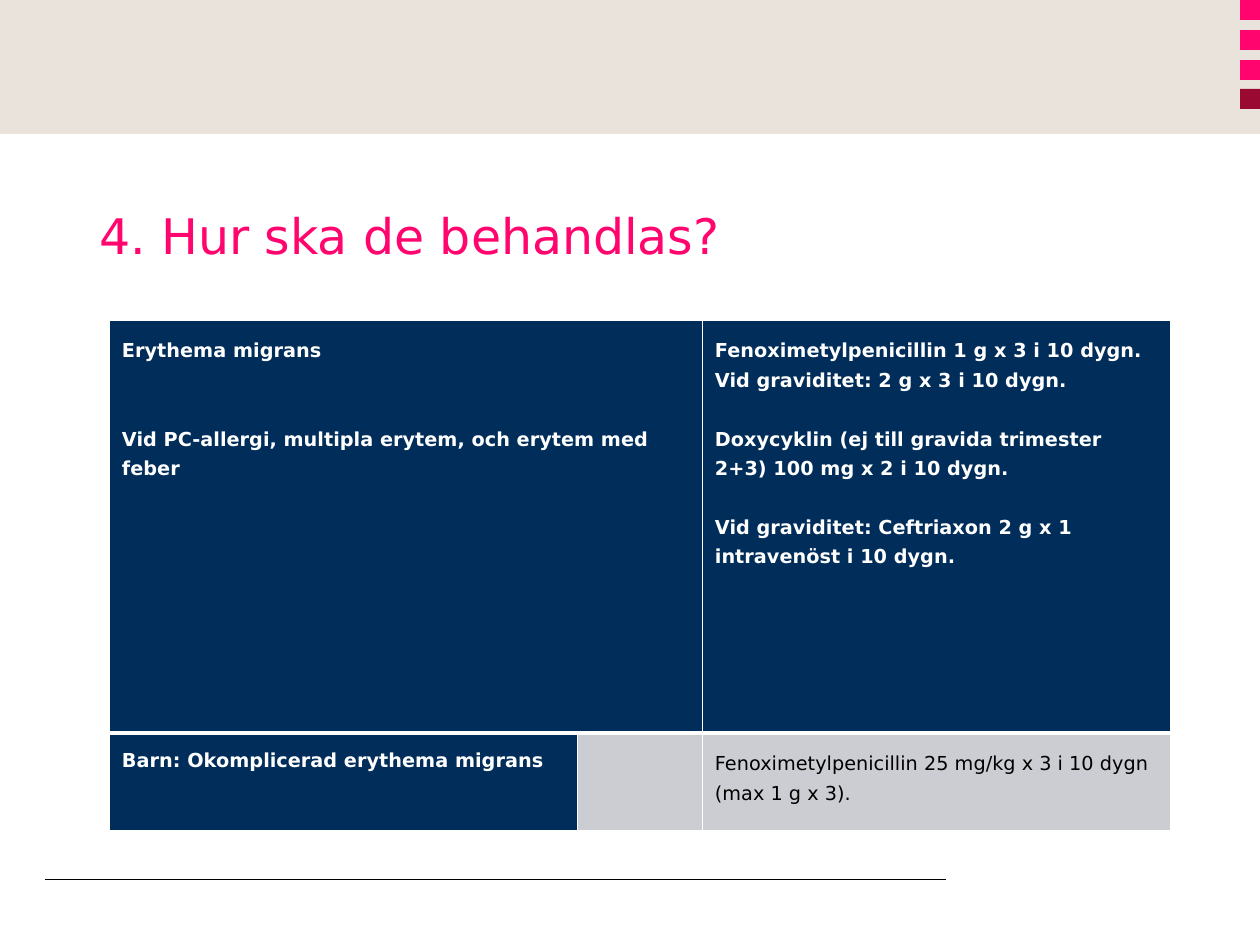
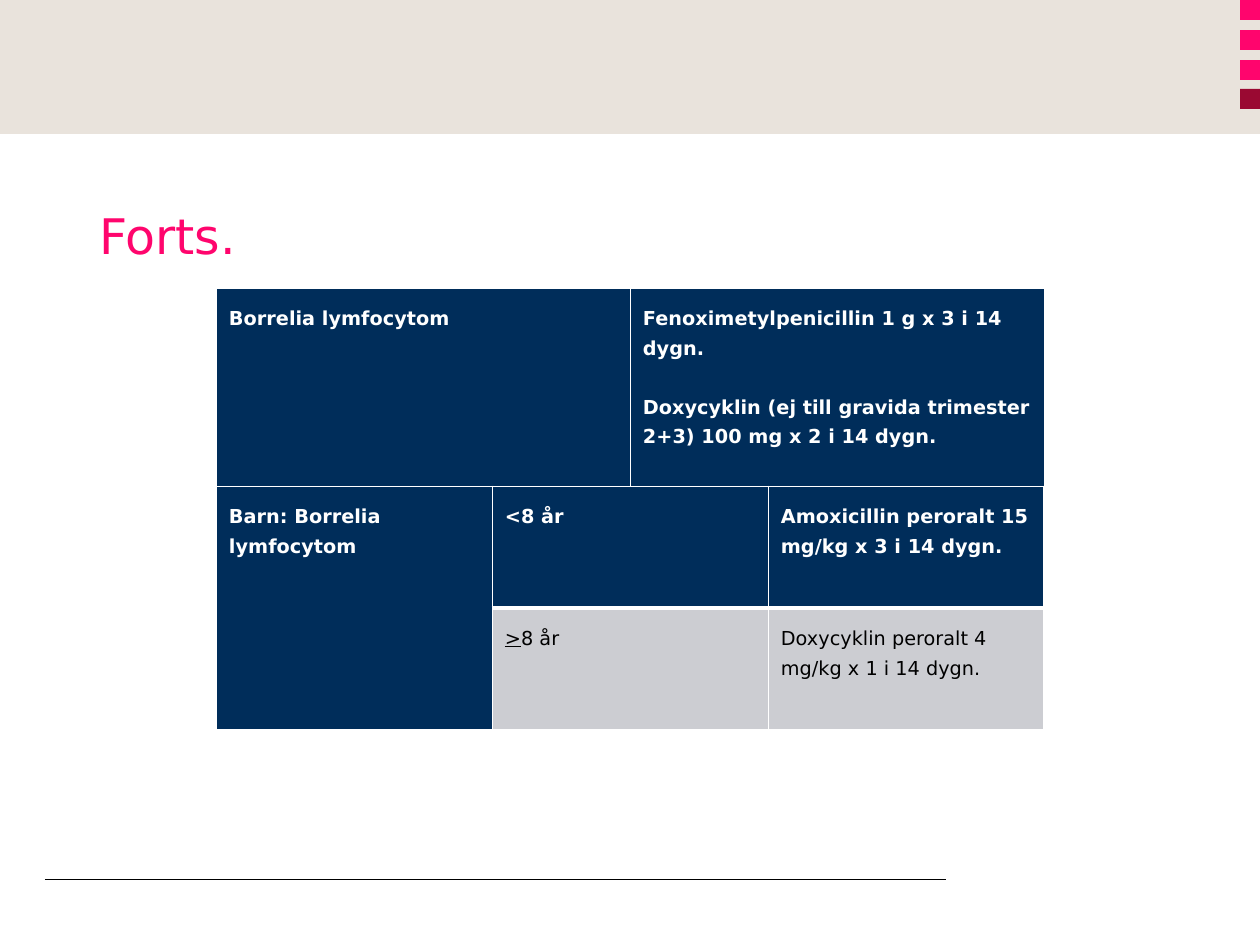
from dataclasses import dataclass

from lxml import etree
from pptx import Presentation
from pptx.dml.color import RGBColor
from pptx.enum.shapes import MSO_CONNECTOR, MSO_SHAPE
from pptx.enum.text import MSO_ANCHOR, MSO_AUTO_SIZE, PP_ALIGN
from pptx.oxml.ns import qn
from pptx.util import Emu, Pt

RECTANGLE = MSO_SHAPE.RECTANGLE
STRAIGHT = MSO_CONNECTOR.STRAIGHT
BOTTOM = MSO_ANCHOR.BOTTOM
LEFT = PP_ALIGN.LEFT
NO_AUTOFIT = MSO_AUTO_SIZE.NONE
TITLE_ONLY = 5


@dataclass(frozen=True)
class Theme:
    font: str = "DejaVu Sans"
    title_size: int = 28
    cell_size: int = 11
    line_pitch: float = 16.8
    pink: str = "FF056D"
    wine: str = "9A0932"
    sand: str = "E9E3DC"
    navy: str = "002D5A"
    grey: str = "CCCDD2"
    white: str = "FFFFFF"
    black: str = "000000"
    thin: float = 0.5
    thick: int = 3


THEME = Theme()


@dataclass(frozen=True)
class Entry:
    lines: tuple = ()
    dark: bool = True
    gaps: tuple = (0,)
    line_spacing: float = Pt(THEME.line_pitch)
    underlined: str = ""
    span: tuple = (1, 1)


def px(length):
    return Emu(round(length * 914400 / 126))


def rgb(value):
    return RGBColor.from_string(value)


def style_font(font, size, color, bold=False):
    font.name = THEME.font
    font.size = Pt(size)
    font.bold = bold
    font.color.rgb = rgb(color)


def add_block(page, left, top, width, height, color):
    block = page.shapes.add_shape(RECTANGLE, px(left), px(top), px(width), px(height))
    block.shadow.inherit = False
    block.fill.solid()
    block.fill.fore_color.rgb = rgb(color)
    block.line.fill.background()


def add_rule(page, left, right, top):
    rule = page.shapes.add_connector(STRAIGHT, px(left), px(top), px(right), px(top))
    rule.line.color.rgb = rgb(THEME.black)
    rule.line.width = Pt(THEME.thin)
    etree.SubElement(rule._element.spPr, qn("a:effectLst"))


def add_page(deck, heading):
    page = deck.slides.add_slide(deck.slide_layouts[TITLE_ONLY])
    add_block(page, 0, 0, 1260, 134, THEME.sand)
    for index, color in enumerate([THEME.pink] * 3 + [THEME.wine]):
        add_block(page, 1240, round(index * 29.75), 20, 20, color)
    add_rule(page, 45, 946, 879)

    title = page.shapes.title
    title.left, title.top, title.width, title.height = px(99), px(150), px(1061), px(114)
    frame = title.text_frame
    frame.text = heading
    frame.auto_size = NO_AUTOFIT
    frame.vertical_anchor = BOTTOM
    frame.margin_left = frame.margin_top = frame.margin_right = frame.margin_bottom = 0
    para = frame.paragraphs[0]
    para.alignment = LEFT
    style_font(para.runs[0].font, THEME.title_size, THEME.pink)
    return page


def set_borders(cell, top, bottom):
    properties = cell._tc.get_or_add_tcPr()
    weights = {"a:lnL": THEME.thin, "a:lnR": THEME.thin, "a:lnT": top, "a:lnB": bottom}
    for position, (side, weight) in enumerate(weights.items()):
        border = etree.Element(qn(side), w=str(Pt(weight)))
        fill = etree.SubElement(border, qn("a:solidFill"))
        etree.SubElement(fill, qn("a:srgbClr"), val=THEME.white)
        properties.insert(position, border)


def fill_cell(cell, entry):
    cell.fill.solid()
    cell.fill.fore_color.rgb = rgb(THEME.navy if entry.dark else THEME.grey)
    cell.margin_left = cell.margin_top = cell.margin_right = cell.margin_bottom = px(13)
    frame = cell.text_frame
    for index, (line, gap) in enumerate(zip(entry.lines, entry.gaps)):
        para = frame.paragraphs[0] if index == 0 else frame.add_paragraph()
        para.line_spacing = entry.line_spacing
        if gap:
            para.space_before = Pt(gap * THEME.line_pitch)
        if entry.underlined:
            span = para.add_run()
            span.text = entry.underlined
            span.font.underline = True
        para.add_run().text = line
        for span in para.runs:
            color = THEME.white if entry.dark else THEME.black
            style_font(span.font, THEME.cell_size, color, entry.dark)


def add_grid(page, left, top, widths, heights, rows, divider=THEME.thin):
    grid = page.shapes.add_table(
        len(heights), len(widths), px(left), px(top), px(sum(widths)), px(sum(heights))
    ).table
    grid.first_row = grid.horz_banding = False
    for column, width in zip(grid.columns, widths):
        column.width = px(width)
    for row, height in zip(grid.rows, heights):
        row.height = px(height)
    last = len(rows) - 1
    for row_index, entries in enumerate(rows):
        for column_index, entry in enumerate(entries):
            if entry is None:
                continue
            cell = grid.cell(row_index, column_index)
            end_row = row_index + entry.span[0] - 1
            if entry.span != (1, 1):
                cell.merge(grid.cell(end_row, column_index + entry.span[1] - 1))
            fill_cell(cell, entry)
            set_borders(
                cell,
                divider if row_index else THEME.thin,
                divider if end_row < last else THEME.thin,
            )


def build_treatment(deck):
    page = add_page(deck, "4. Hur ska de behandlas?")
    diagnosis = Entry(
        ("Erythema migrans", "Vid PC-allergi, multipla erytem, och erytem med feber"),
        gaps=(0, 2),
        span=(1, 2),
    )
    medicine = Entry(
        (
            "Fenoximetylpenicillin 1 g x 3 i 10 dygn.",
            "Vid graviditet: 2 g x 3 i 10 dygn.",
            "Doxycyklin (ej till gravida trimester 2+3) 100 mg x 2 i 10 dygn.",
            "Vid graviditet: Ceftriaxon 2 g x 1 intravenöst i 10 dygn.",
        ),
        gaps=(0, 0, 1, 1),
    )
    children = Entry(("Barn: Okomplicerad erythema migrans",), line_spacing=1.15)
    dose = Entry(
        ("Fenoximetylpenicillin 25 mg/kg x 3 i 10 dygn (max 1 g x 3).",), dark=False
    )
    rows = [[diagnosis, None, medicine], [children, Entry(dark=False), dose]]
    add_grid(page, 109, 320, [468, 125, 468], [413, 97], rows, THEME.thick)


def build_continuation(deck):
    page = add_page(deck, "Forts.")
    medicine = Entry(
        (
            "Fenoximetylpenicillin 1 g x 3 i 14 dygn.",
            "Doxycyklin (ej till gravida trimester 2+3) 100 mg x 2 i 14 dygn.",
        ),
        gaps=(0, 1),
    )
    add_grid(page, 216, 288, [414, 414], [198], [[Entry(("Borrelia lymfocytom",)), medicine]])

    children = Entry(("Barn: Borrelia lymfocytom",), span=(2, 1))
    younger = [Entry(("<8 år",)), Entry(("Amoxicillin peroralt 15 mg/kg x 3 i 14 dygn.",))]
    older = [
        Entry(("8 år",), dark=False, underlined=">"),
        Entry(("Doxycyklin peroralt 4 mg/kg x 1 i 14 dygn.",), dark=False),
    ]
    rows = [[children, *younger], [None, *older]]
    add_grid(page, 216, 486, [276] * 3, [122, 121], rows, THEME.thick)


def main():
    deck = Presentation()
    deck.slide_width, deck.slide_height = px(1260), px(945)
    build_treatment(deck)
    build_continuation(deck)
    deck.save("out.pptx")


if __name__ == "__main__":
    main()
